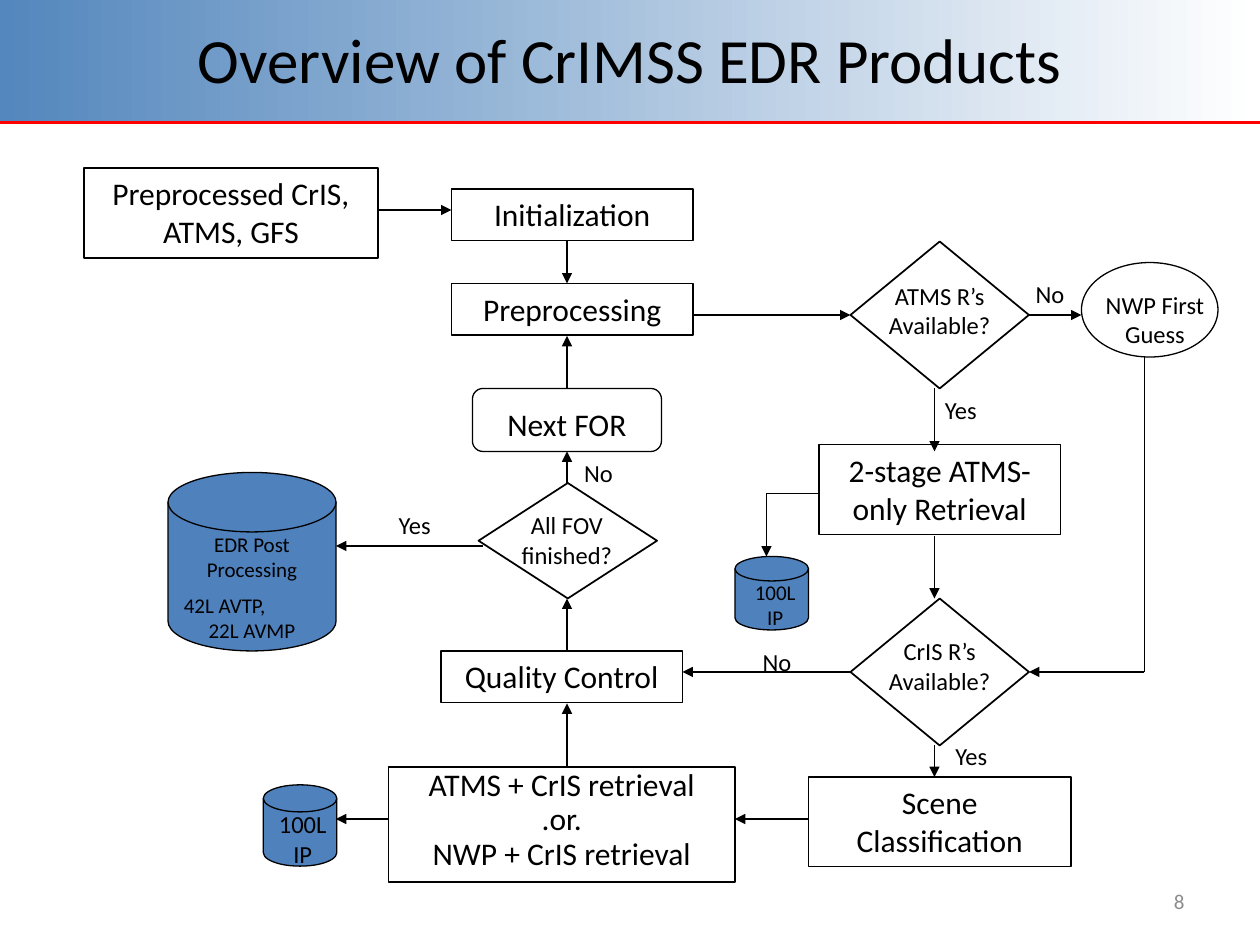
from lxml import etree
from pptx import Presentation
from pptx.dml.color import RGBColor
from pptx.enum.shapes import MSO_CONNECTOR as Link, MSO_SHAPE as Kind
from pptx.enum.text import MSO_ANCHOR as Anchor, PP_ALIGN as Align
from pptx.oxml.ns import qn
from pptx.util import Pt

BLACK = RGBColor(0x00, 0x00, 0x00)
WHITE = RGBColor(0xFF, 0xFF, 0xFF)
BLUE = RGBColor(0x4F, 0x81, 0xBD)
SKY = RGBColor(0x54, 0x87, 0xBD)
RED = RGBColor(0xFF, 0x00, 0x00)
GREY = RGBColor(0x8C, 0x8C, 0x8C)

deck = Presentation()
deck.slide_width, deck.slide_height = Pt(720), Pt(540)
slide = deck.slides.add_slide(deck.slide_layouts[6])
shapes = slide.shapes


def write(shape, text, size=18, color=BLACK, align=Align.CENTER,
          anchor=Anchor.TOP, gap=0, lead=None):
    """Fill a shape with one paragraph per line of text."""
    frame = shape.text_frame
    frame.word_wrap = True
    frame.vertical_anchor = anchor
    for i, line in enumerate(text.split("\n")):
        para = frame.add_paragraph() if i else frame.paragraphs[0]
        para.text = line
        para.alignment = align
        para.line_spacing = lead
        if i:
            para.space_before = Pt(gap)
        para.font.name = "Calibri"
        para.font.size = Pt(size)
        para.font.color.rgb = color
    return frame


def join(x1, y1, x2, y2, color=BLACK, width=0.75, arrow=True):
    """Draw a straight line, with an arrowhead at its end if asked."""
    line = shapes.add_connector(Link.STRAIGHT, Pt(x1), Pt(y1), Pt(x2), Pt(y2))
    line.line.color.rgb = color
    line.line.width = Pt(width)
    if arrow:
        tail = etree.SubElement(line.line._get_or_add_ln(), qn("a:tailEnd"))
        tail.set("type", "triangle")
    etree.SubElement(line._element.spPr, qn("a:effectLst"))


# Header band, rule and title
band = shapes.add_shape(Kind.RECTANGLE, 0, Pt(-1), Pt(720), Pt(71))
band.shadow.inherit = False
band.line.fill.background()
band.fill.gradient()
band.fill.gradient_angle = 0
for stop, color in zip(band.fill.gradient_stops, (SKY, WHITE)):
    stop.color.rgb = color
for stop, place in zip(band.fill.gradient_stops, (0, 1)):
    stop.position = place
join(0, 70, 720, 70, color=RED, width=1.25, arrow=False)
title = shapes.add_textbox(Pt(36), Pt(2), Pt(648), Pt(63))
write(title, "Overview of CrIMSS EDR Products", size=36, anchor=Anchor.MIDDLE)

# Flow chart outlines: kind, left, top, width, height, line width, text
RECT, ROUND = Kind.RECTANGLE, Kind.FLOWCHART_ALTERNATE_PROCESS
TEST, DISK = Kind.FLOWCHART_DECISION, Kind.FLOWCHART_MAGNETIC_DISK
nodes = [
    (RECT, 48, 96, 168, 51.5, 1, "Preprocessed CrIS, ATMS, GFS"),
    (RECT, 258, 108, 138, 29.5, 1, "Initialization"),
    (RECT, 258, 162, 138, 29.5, 1, "Preprocessing"),
    (RECT, 252, 372, 138, 29.5, 1, "Quality Control"),
    (RECT, 468, 254, 138, 51.5, 1, "2-stage ATMS-only Retrieval"),
    (RECT, 462, 444, 150, 51, 0.75, "Scene Classification"),
    (RECT, 222, 438.5, 198, 65.5, 1,
     "ATMS + CrIS retrieval\n.or.\nNWP + CrIS retrieval"),
    (ROUND, 270, 222, 108, 36, 0.75, ""),
    (Kind.OVAL, 618, 150, 78, 54, 0.75, ""),
    (TEST, 486, 138, 102, 84, 1, ""),
    (TEST, 486, 342, 102, 84, 1, ""),
    (TEST, 273.5, 276, 102, 66, 1, ""),
    (DISK, 96, 270, 96, 102, 0.75, ""),
    (DISK, 420, 318, 42, 42, 0.75, ""),
    (DISK, 150.5, 448.5, 42, 46.5, 0.75, ""),
]
for kind, x, y, w, h, width, text in nodes:
    node = shapes.add_shape(kind, Pt(x), Pt(y), Pt(w), Pt(h))
    node.shadow.inherit = False
    node.line.color.rgb = BLACK
    node.line.width = Pt(width)
    if kind == DISK:
        node.fill.solid()
        node.fill.fore_color.rgb = BLUE
    else:
        node.fill.background()
    if text:
        write(node, text, gap=3.6, lead=0.75 if "\n" in text else None)

# Arrows between the steps
MID, SIDE = 324, 534
for y1, y2 in [(138, 162), (222, 192), (276, 258), (372, 342), (438, 402)]:
    join(MID, y1, MID, y2)
for y1, y2 in [(222, 258), (306, 342), (426, 444)]:
    join(SIDE, y1, SIDE, y2)
for y, x1, x2 in [(120, 216, 258), (180, 396, 486), (180, 588, 618),
                  (312, 276, 192), (384, 486, 390), (384, 654, 588),
                  (468, 462, 420), (468, 222, 192)]:
    join(x1, y, x2, y)
join(438, 282, 438, 318)

# Plain legs of the bent arrows
join(468, 282, 438, 282, arrow=False)
join(654, 204, 654, 384, arrow=False)

# Free text: left, top, width, height, size, text
labels = [
    (264, 228, 120, 29, 18, "Next FOR"),
    (288, 288, 72, 41, 14, "All FOV finished?"),
    (486, 157, 102, 41, 14, "ATMS R’s Available?"),
    (486, 360, 102, 41, 14, "CrIS R’s Available?"),
    (612, 162, 96, 41, 14, "NWP First Guess"),
    (419, 327.5, 48, 36, 12, "100L IP"),
    (149, 459, 48, 41, 14, "100L IP"),
]
labels += [(x, y, 54, 24, 14, "Yes")
           for x, y in [(210, 288), (522, 222), (528, 420)]]
labels += [(x, y, 48, 24, 14, "No")
           for x, y in [(576, 156), (318, 258), (420, 366)]]
for x, y, w, h, size, text in labels:
    write(shapes.add_textbox(Pt(x), Pt(y), Pt(w), Pt(h)), text, size=size)

# Output products, with the first one set to the left
store = shapes.add_textbox(Pt(90), Pt(300), Pt(108), Pt(73))
frame = write(store, "EDR Post Processing\n42L AVTP,\n22L AVMP", size=12)
first = frame.paragraphs[1]
first.space_before = Pt(6)
first.alignment = Align.LEFT
first._p.get_or_add_pPr().set("marL", str(Pt(8)))

# Page number
page = shapes.add_textbox(Pt(516), Pt(500.5), Pt(168), Pt(29))
write(page, "8", size=12, color=GREY, align=Align.RIGHT, anchor=Anchor.MIDDLE)

deck.save("out.pptx")
